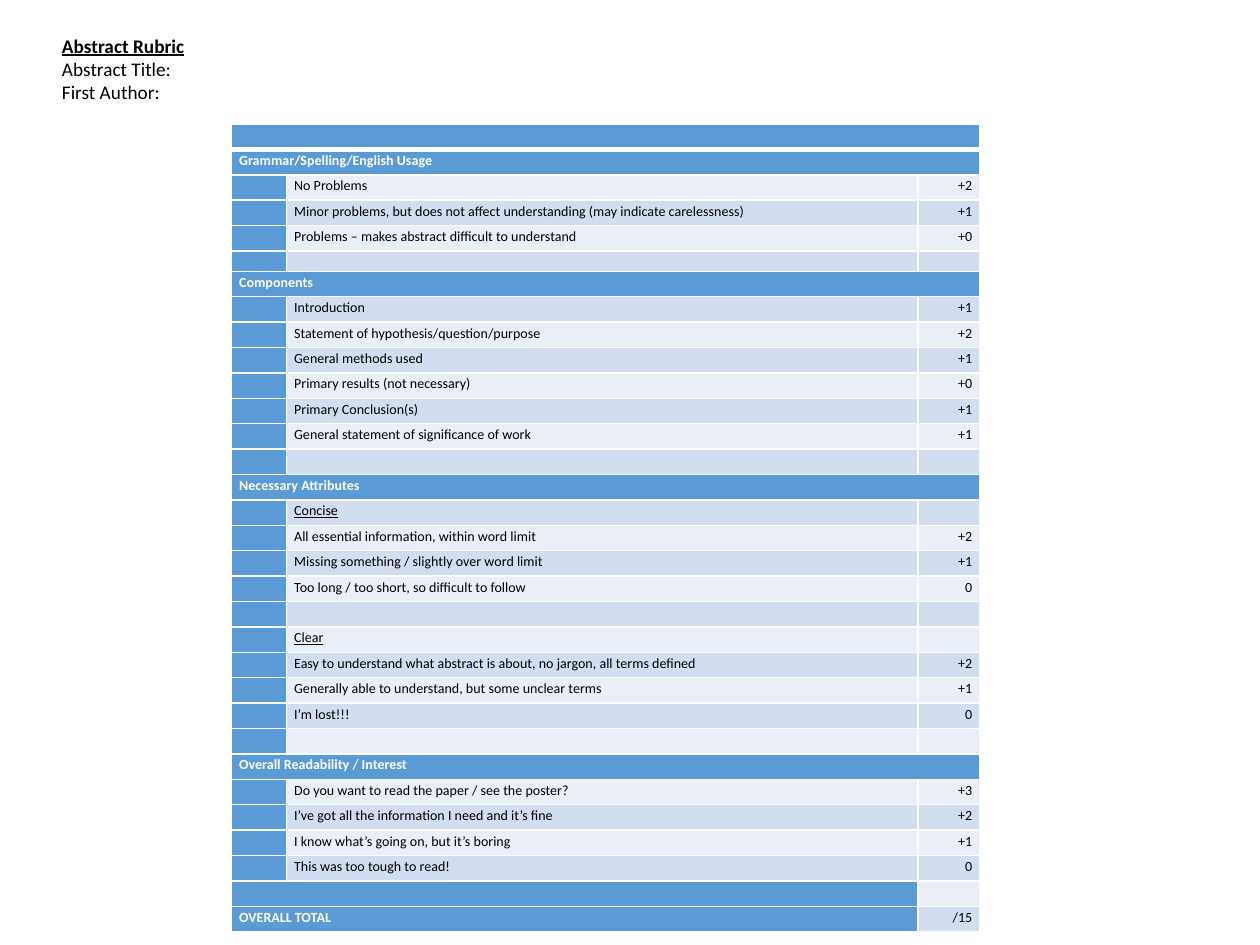
from dataclasses import dataclass

from lxml.etree import SubElement
from pptx import Presentation
from pptx.dml.color import RGBColor
from pptx.enum.text import MSO_ANCHOR, MSO_AUTO_SIZE, PP_ALIGN
from pptx.oxml.ns import qn
from pptx.util import Cm, Pt


@dataclass(frozen=True)
class Theme:
    font: str = "Calibri"
    blue: str = "5B9BD5"
    bands: tuple = ("EAEFF7", "D2DEEF")
    white: str = "FFFFFF"
    black: str = "000000"
    title: int = 11
    body: int = 8
    rule: int = 1
    thick: int = 3


THEME = Theme()

HEADS = ["Abstract Rubric", "Abstract Title:", "First Author:"]
BLANK = ("item", "", "")
# Each row: kind, label, points
ROWS = [
    ("band", "", ""),
    ("band", "Grammar/Spelling/English Usage", ""),
    ("item", "No Problems", "+2"),
    ("item", "Minor problems, but does not affect understanding (may indicate carelessness)", "+1"),
    ("item", "Problems – makes abstract difficult to understand", "+0"),
    BLANK,
    ("band", "Components", ""),
    ("item", "Introduction", "+1"),
    ("item", "Statement of hypothesis/question/purpose", "+2"),
    ("item", "General methods used", "+1"),
    ("item", "Primary results (not necessary)", "+0"),
    ("item", "Primary Conclusion(s)", "+1"),
    ("item", "General statement of significance of work", "+1"),
    BLANK,
    ("band", "Necessary Attributes", ""),
    ("topic", "Concise", ""),
    ("item", "All essential information, within word limit", "+2"),
    ("item", "Missing something / slightly over word limit", "+1"),
    ("item", "Too long / too short, so difficult to follow", "0"),
    BLANK,
    ("topic", "Clear", ""),
    ("item", "Easy to understand what abstract is about, no jargon, all terms defined", "+2"),
    ("item", "Generally able to understand, but some unclear terms", "+1"),
    ("item", "I’m lost!!!", "0"),
    BLANK,
    ("band", "Overall Readability / Interest", ""),
    ("item", "Do you want to read the paper / see the poster?", "+3"),
    ("item", "I’ve got all the information I need and it’s fine", "+2"),
    ("item", "I know what’s going on, but it’s boring", "+1"),
    ("item", "This was too tough to read!", "0"),
    ("total", "", ""),
    ("total", "OVERALL TOTAL", "/15"),
]
COLS = (1.11, 12.73, 1.24)
HIGH = 16.31
SLIM = BLANK, 0.41


def add_run(para, text, size, color, bold=False, line=False):
    run = para.add_run()
    run.text = text
    font = run.font
    font.name, font.size = THEME.font, Pt(size)
    font.bold, font.underline = bold, line
    font.color.rgb = RGBColor.from_string(color)


def set_edges(cell, top, low):
    props = cell._tc.get_or_add_tcPr()
    sides = {"lnL": THEME.rule, "lnR": THEME.rule, "lnT": top, "lnB": low}
    for at, (side, width) in enumerate(sides.items()):
        edge = SubElement(props, qn(f"a:{side}"), w=str(Pt(width)))
        fill = SubElement(edge, qn("a:solidFill"))
        SubElement(fill, qn("a:srgbClr"), val=THEME.white)
        props.insert(at, edge)


def fill_cell(cell, text, fill, align=PP_ALIGN.LEFT, line=False):
    cell.fill.solid()
    cell.fill.fore_color.rgb = RGBColor.from_string(fill)
    cell.margin_left = cell.margin_right = Cm(0.15)
    cell.margin_top = cell.margin_bottom = 0
    para = cell.text_frame.paragraphs[0]
    para.alignment = align
    if text:
        para.line_spacing = 1.15
        head = fill == THEME.blue
        color = THEME.white if head else THEME.black
        add_run(para, text, THEME.body, color, head, line)
    else:
        # An empty cell takes its height from the end mark
        para._p.get_or_add_endParaRPr().set("sz", str(THEME.body * 100))


def fill_row(table, at, kind, label, points):
    cells = [table.cell(at, col) for col in range(len(COLS))]
    tint = THEME.bands[at % 2]
    if kind in ("band", "total"):
        last = 2 if kind == "band" else 1
        cells[0].merge(cells[last])
        texts = (label, "", points)
        fills = [THEME.blue] * (last + 1) + [tint] * (2 - last)
    else:
        texts = ("", label, points)
        fills = (THEME.blue, tint, tint)
    for col, cell in enumerate(cells):
        align = PP_ALIGN.RIGHT if col == 2 else PP_ALIGN.LEFT
        line = kind == "topic" and col == 1
        fill_cell(cell, texts[col], fills[col], align, line)
        top = THEME.thick if at == 1 else THEME.rule
        low = THEME.thick if at == 0 else THEME.rule
        set_edges(cell, top, low)


def add_rubric(slide):
    frame = slide.shapes.add_table(
        len(ROWS), len(COLS), Cm(4.67), Cm(2.5), Cm(sum(COLS)), Cm(HIGH))
    table = frame.table
    for col, width in zip(table.columns, COLS):
        col.width = Cm(width)
    blank, slim = SLIM
    first = ROWS.index(blank)
    pitch = (HIGH - slim) / (len(ROWS) - 1)
    for at, row in enumerate(ROWS):
        table.rows[at].height = Cm(slim if at == first else pitch)
        fill_row(table, at, *row)


def add_heads(slide):
    box = slide.shapes.add_textbox(Cm(1), Cm(0.75), Cm(25.4), Cm(1.28))
    frame = box.text_frame
    frame.word_wrap = False
    frame.auto_size = MSO_AUTO_SIZE.SHAPE_TO_FIT_TEXT
    frame.vertical_anchor = MSO_ANCHOR.MIDDLE
    for at, text in enumerate(HEADS):
        para = frame.add_paragraph() if at else frame.paragraphs[0]
        add_run(para, text, THEME.title, THEME.black, at == 0, at == 0)


def main():
    deck = Presentation()
    deck.slide_width, deck.slide_height = Cm(25.4), Cm(19.05)
    slide = deck.slides.add_slide(deck.slide_layouts[6])
    add_rubric(slide)
    add_heads(slide)
    deck.save("out.pptx")


if __name__ == "__main__":
    main()
